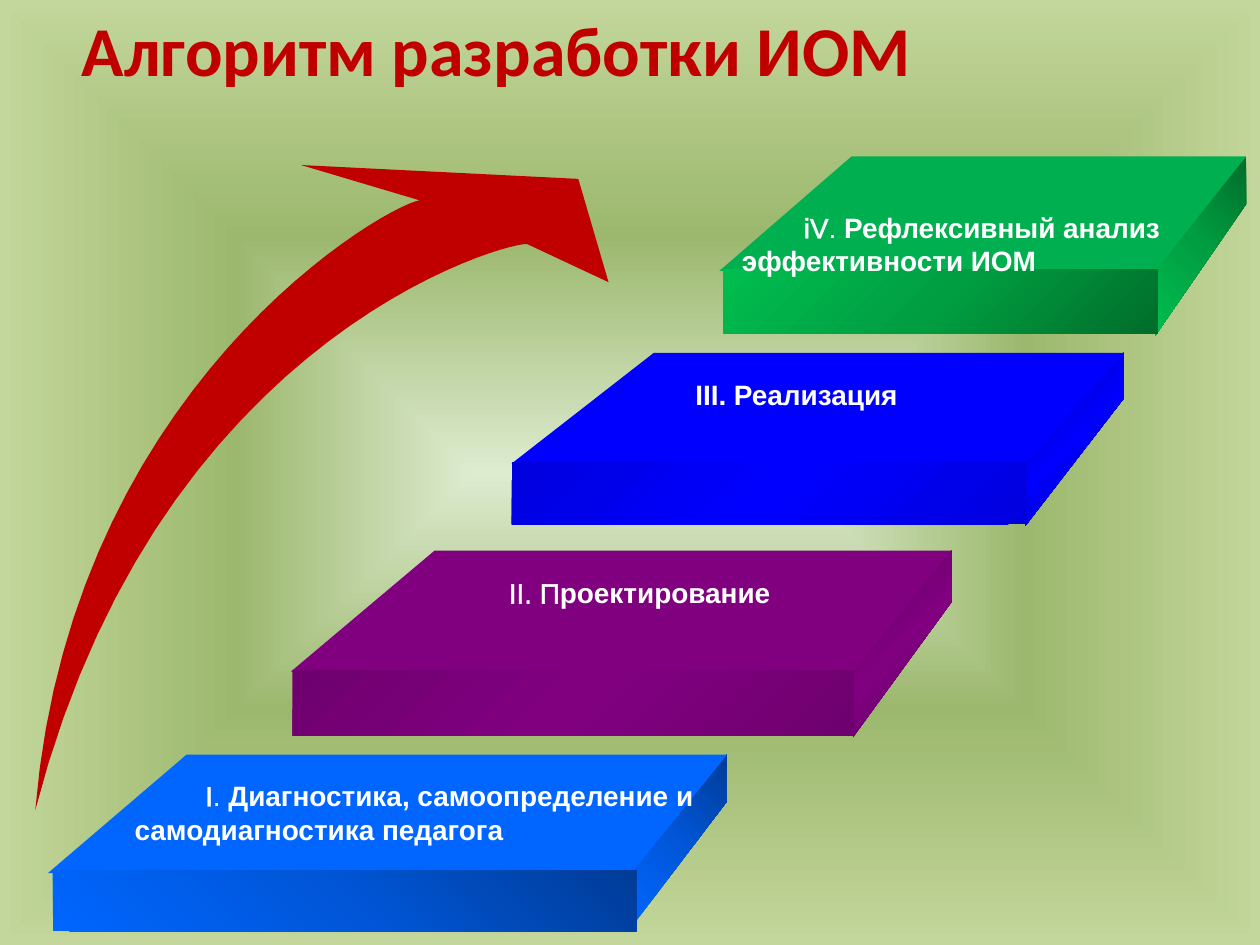
from lxml import etree
from pptx import Presentation
from pptx.dml.color import RGBColor
from pptx.enum.shapes import MSO_SHAPE
from pptx.enum.text import MSO_ANCHOR, PP_ALIGN
from pptx.oxml.ns import qn
from pptx.util import Inches, Pt

RECTANGLE = MSO_SHAPE.RECTANGLE
TOP, LEFT = MSO_ANCHOR.TOP, PP_ALIGN.LEFT

RED = RGBColor(0xC0, 0x00, 0x00)
WHITE = RGBColor(0xFF, 0xFF, 0xFF)
GREEN = RGBColor(0x00, 0xB0, 0x50)
BLUE = RGBColor(0x00, 0x00, 0xFF)
PURPLE = RGBColor(0x80, 0x00, 0x80)
AZURE = RGBColor(0x00, 0x66, 0xFF)

# Gradients: three colours, then an angle or a path with its focus (l, t, r, b)
BACKDROP = dict(colors=("DDEBCF", "9CB86E", "C3D69B"), shade="shape", focus=(50, 50, 50, 50))
GREEN_SHADES = ("006D2A", "009E41", "00BD4F")
AZURE_SHADE = dict(colors=("003C97", "0056D7", "0066FF"), shade="circle", focus=(100, 0, 0, 100))

# Content
TITLE = "Алгоритм разработки ИОМ"

# top: front-left, front-right, back-left, back-right x; back and front y
# side: lower y at the back and at the front; front: left, top, right, bottom
# text runs: (words, bold, outlined)
STEPS = [
    dict(color=GREEN, top=(5.71, 9.17, 6.76, 9.89, 1.24, 2.15), side=(1.62, 2.66),
         front=(5.74, 2.14, 9.19, 2.65),
         side_fill=dict(colors=GREEN_SHADES, angle=135),
         front_fill=dict(colors=GREEN_SHADES, angle=225),
         box=(5.79, 1.62, 5.68, 0.64), indent=0.49,
         text=[[("iV", False, True), (". ", False, False), ("Рефлексивный анализ", True, False)],
               [("эффективности ИОМ", True, False)]]),
    dict(color=AZURE, top=(0.38, 5.01, 1.48, 5.77, 5.99, 6.93), side=(6.36, 7.36),
         front=(0.42, 6.91, 5.05, 7.39),
         side_fill=AZURE_SHADE, front_fill=AZURE_SHADE,
         box=(0.97, 6.13, 5.12, 0.64), indent=0.56,
         text=[[("I", False, True), (". ", False, False),
                ("Диагностика, самоопределение и самодиагностика педагога", True, False)]]),
    dict(color=PURPLE, top=(2.31, 6.77, 3.45, 7.55, 4.37, 5.33), side=(4.78, 5.85),
         front=(2.32, 5.32, 6.78, 5.84),
         side_fill=dict(colors=("5C005C", "800080", "5C005C"), angle=45),
         front_fill=dict(colors=("6F006F", "800080", "6F006F"), angle=45),
         box=(3.2, 4.52, 5.03, 0.4), indent=0.74,
         text=[[("II. П", False, True), ("роектирование", True, False)]]),
    dict(color=BLUE, top=(4.06, 8.14, 5.19, 8.92, 2.8, 3.68), side=(3.16, 4.17),
         front=(4.06, 3.67, 8.15, 4.16),
         side_fill=dict(colors=("0000B6", "0000FF", "0000B6"), angle=45),
         front_fill=dict(colors=("0000DE", "0000FF", "0000DE"), angle=45),
         box=(4.68, 2.95, 5.49, 0.37), indent=0.74,
         text=[[("III. Реализация", True, False)]]),
]

# Arrow: two Bezier edges joined by the head
ARROW_OUTER = [(0.28, 6.43), (0.56, 3.07), (3.04, 1.64), (3.33, 1.59)]
ARROW_HEAD = [(2.39, 1.31), (4.59, 1.42), (4.83, 2.24)]
ARROW_INNER = [(4.19, 1.94), (4.19, 1.88), (1.28, 2.55), (0.28, 6.43)]
CURVE_STEPS = 30


def set_gradient(fill, parent, colors, angle=None, shade=None, focus=None):
    """Replace the fill under parent by a three-stop gradient."""
    fill.solid()
    solid = parent.find(qn("a:solidFill"))
    grad = etree.Element(qn("a:gradFill"), rotWithShape="1")
    stops = etree.SubElement(grad, qn("a:gsLst"))
    for position, color in zip((0, 50000, 100000), colors):
        stop = etree.SubElement(stops, qn("a:gs"), pos=str(position))
        etree.SubElement(stop, qn("a:srgbClr"), val=color)
    if shade:
        route = etree.SubElement(grad, qn("a:path"), path=shade)
        sides = {side: str(value * 1000) for side, value in zip("ltrb", focus)}
        etree.SubElement(route, qn("a:fillToRect"), **sides)
    else:
        etree.SubElement(grad, qn("a:lin"), ang=str(angle * 60000), scaled="1")
    parent.replace(solid, grad)


def paint(shape, fill):
    """Give a shape a plain colour or a gradient, without line and shadow."""
    if isinstance(fill, RGBColor):
        shape.fill.solid()
        shape.fill.fore_color.rgb = fill
    else:
        set_gradient(shape.fill, shape._element.spPr, **fill)
    shape.line.fill.background()
    shape.shadow.inherit = False


def add_polygon(slide, points, fill):
    corners = [(Inches(x), Inches(y)) for x, y in points]
    builder = slide.shapes.build_freeform(*corners[0])
    builder.add_line_segments(corners[1:], close=True)
    paint(builder.convert_to_shape(), fill)


def bezier(p0, p1, p2, p3):
    points = []
    for i in range(CURVE_STEPS + 1):
        t = i / CURVE_STEPS
        u = 1 - t
        points.append(tuple(u**3 * a + 3 * u * u * t * b + 3 * u * t * t * c + t**3 * d
                            for a, b, c, d in zip(p0, p1, p2, p3)))
    return points


def write(shape, paragraphs, *, font, size, color, box, indent=0):
    """Place a text shape and fill it with formatted runs."""
    shape.left, shape.top, shape.width, shape.height = map(Inches, box)
    frame = shape.text_frame
    frame.word_wrap = True
    frame.vertical_anchor = TOP
    for i, runs in enumerate(paragraphs):
        paragraph = frame.add_paragraph() if i else frame.paragraphs[0]
        paragraph.alignment = LEFT
        paragraph.line_spacing = 1.0
        if indent and i == 0:
            paragraph._p.get_or_add_pPr().set("indent", str(Inches(indent)))
        for words, bold, outlined in runs:
            run = paragraph.add_run()
            run.text = words
            run.font.name, run.font.size, run.font.bold = font, Pt(size), bold
            run.font.color.rgb = color
            if outlined:
                outline = etree.Element(qn("a:ln"), w=str(Pt(1.45)))
                solid = etree.SubElement(outline, qn("a:solidFill"))
                etree.SubElement(solid, qn("a:srgbClr"), val=str(color))
                run.font._element.insert(0, outline)


def add_step(slide, step):
    front_left, front_right, back_left, back_right, back_y, front_y = step["top"]
    back_low, front_low = step["side"]
    left, top, right, bottom = step["front"]
    # Side, top and front faces
    add_polygon(slide, [(back_right, back_low), (front_right, front_low),
                        (front_right, front_y), (back_right, back_y)], step["side_fill"])
    add_polygon(slide, [(front_right, front_y), (front_left, front_y),
                        (back_left, back_y), (back_right, back_y)], step["color"])
    front = slide.shapes.add_shape(
        RECTANGLE, *map(Inches, (left, top, right - left, bottom - top)))
    paint(front, step["front_fill"])
    # Caption
    caption = slide.shapes.add_textbox(*map(Inches, step["box"]))
    write(caption, step["text"], font="Arial", size=16, color=WHITE,
          box=step["box"], indent=step["indent"])


def main():
    prs = Presentation()
    prs.slide_width, prs.slide_height = Inches(10), Inches(7.5)
    slide = prs.slides.add_slide(prs.slide_layouts[5])

    # Background
    backdrop = slide.background.fill
    backdrop.solid()
    set_gradient(backdrop, slide._element.find(".//" + qn("p:bgPr")), **BACKDROP)

    # Steps, arrow and title
    for step in STEPS:
        add_step(slide, step)
    add_polygon(slide, bezier(*ARROW_OUTER) + ARROW_HEAD + bezier(*ARROW_INNER)[:-1], RED)
    write(slide.shapes.title, [[(TITLE, True, False)]], font="Calibri", size=40,
          color=RED, box=(0.55, 0, 9.2, 0.77))

    prs.save("out.pptx")


if __name__ == "__main__":
    main()
